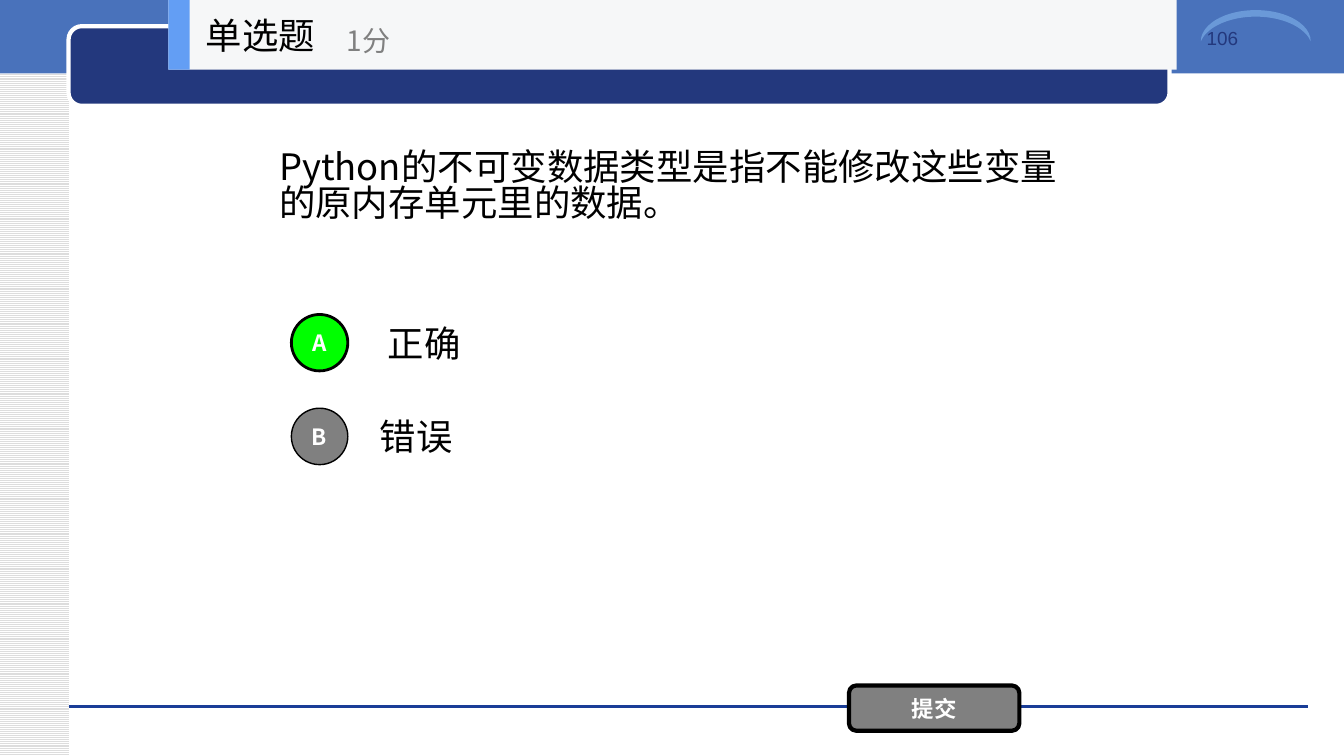
from dataclasses import dataclass
from typing import Optional

from lxml import etree
from pptx import Presentation
from pptx import util as u
from pptx.dml.color import RGBColor
from pptx.enum import dml, shapes, text
from pptx.oxml.ns import qn

CJK = "Noto Sans CJK SC"
COLORS = {
    "white": "FFFFFF", "black": "000000", "gray": "808080", "stripe": "DDDDDD",
    "band": "4972BB", "navy": "23387D", "rule": "1A3D97", "moon": "6A99D8",
    "header": "F6F7F8", "accent": "639EF4", "correct": "00FF00",
}
SHAPE = shapes.MSO_SHAPE


@dataclass
class Box:
    left: float
    top: float
    width: float
    height: float

    def emu(self) -> tuple:
        return tuple(map(u.Inches, (self.left, self.top, self.width, self.height)))


@dataclass
class Style:
    size: float
    color: str = "black"
    font: str = CJK
    bold: bool = False
    align: text.PP_ALIGN = text.PP_ALIGN.LEFT
    anchor: text.MSO_ANCHOR = text.MSO_ANCHOR.MIDDLE
    spacing: float = 1.0


@dataclass
class Option:
    letter: str
    label: str
    label_left: float
    fill: str
    line_width: float


BODY = Style(26)
BUTTON = Style(16, "white", bold=True, align=text.PP_ALIGN.CENTER)
OPTIONS = [
    Option("A", "正确", 3.75, "correct", 2),
    Option("B", "错误", 3.67, "gray", 1),
]
OPTION_TOP, OPTION_PITCH = 3.05, 0.93


def rgb(name: str) -> RGBColor:
    return RGBColor.from_string(COLORS[name])


def write(sp, words: str, style: Style) -> None:
    tf = sp.text_frame
    tf.text = words
    tf.word_wrap = True
    tf.auto_size = text.MSO_AUTO_SIZE.NONE
    tf.vertical_anchor = style.anchor
    p = tf.paragraphs[0]
    p.alignment = style.align
    p.line_spacing = style.spacing
    r = p.runs[0]
    r.font.size = u.Pt(style.size)
    r.font.bold = style.bold
    r.font.name = style.font
    r.font.color.rgb = rgb(style.color)
    # East Asian characters take their typeface from a:ea
    latin = r.font._element.find(qn("a:latin"))
    ea = etree.Element(qn("a:ea"), typeface=style.font)
    latin.addnext(ea)


def add_text(s, box: Box, words: str, style: Style) -> None:
    write(s.shapes.add_textbox(*box.emu()), words, style)


def add_block(s, kind: SHAPE, box: Box, fill: str,
              line: Optional[str] = None, line_width: float = 0):
    sp = s.shapes.add_shape(kind, *box.emu())
    sp.shadow.inherit = False
    sp.fill.solid()
    sp.fill.fore_color.rgb = rgb(fill)
    if line:
        sp.line.color.rgb = rgb(line)
        sp.line.width = u.Pt(line_width)
    else:
        sp.line.fill.background()
    return sp


def add_background(s) -> None:
    side = add_block(s, SHAPE.RECTANGLE, Box(0, 0, 0.68, 7.5), "white")
    side.fill.patterned()
    side.fill.pattern = dml.MSO_PATTERN.LIGHT_HORIZONTAL
    side.fill.fore_color.rgb = rgb("stripe")
    side.fill.back_color.rgb = rgb("white")

    add_block(s, SHAPE.RECTANGLE, Box(0, -0.03, 13.33, 0.76), "band")
    rule = s.shapes.add_connector(
        shapes.MSO_CONNECTOR.STRAIGHT,
        *map(u.Inches, (0.68, 7.01, 12.97, 7.01)))
    rule.line.color.rgb = rgb("rule")
    rule.line.width = u.Pt(0)
    etree.SubElement(rule._element.spPr, qn("a:effectLst"))

    add_block(s, SHAPE.ROUNDED_RECTANGLE, Box(0.68, 0.26, 10.92, 0.79),
              "navy", "white", 3)
    moon = add_block(s, SHAPE.MOON, Box(12.3, -0.29, 0.31, 1.09), "moon")
    moon.rotation = 90
    moon.adjustments[0] = 0.21
    add_text(s, Box(11.87, 0.21, 1.21, 0.71), "106",
             Style(13.5, "navy", "Arial", anchor=text.MSO_ANCHOR.TOP))


def add_option(s, option: Option, top: float) -> None:
    add_text(s, Box(option.label_left, top, 7, 0.7), option.label, BODY)
    badge = add_block(s, SHAPE.OVAL, Box(2.89, top + 0.07, 0.56, 0.56),
                      option.fill, "black", option.line_width)
    write(badge, option.letter, BUTTON)


def add_header(s) -> None:
    add_block(s, SHAPE.RECTANGLE, Box(1.67, 0, 10, 0.69), "header")
    add_block(s, SHAPE.RECTANGLE, Box(1.67, 0, 0.21, 0.69), "accent")
    title = s.shapes.title
    title.left, title.top, title.width, title.height = Box(1.94, 0, 2.08, 0.69).emu()
    write(title, "单选题", BODY)
    # Bring the title in front of the header bar
    title.element.getparent().append(title.element)
    add_text(s, Box(3.34, 0.12, 2.5, 0.56), "1分", Style(20, "gray"))


def main() -> None:
    prs = Presentation()
    prs.slide_width, prs.slide_height = u.Inches(13.33), u.Inches(7.5)
    s = prs.slides.add_slide(prs.slide_layouts[5])
    add_background(s)
    add_text(s, Box(2.67, 0.69, 8, 2.34),
             "Python的不可变数据类型是指不能修改这些变量的原内存单元里的数据。",
             Style(26, spacing=0.83))
    for i, option in enumerate(OPTIONS):
        add_option(s, option, OPTION_TOP + i * OPTION_PITCH)
    submit = add_block(s, SHAPE.ROUNDED_RECTANGLE, Box(8.42, 6.8, 1.69, 0.45),
                       "gray", "black", 3)
    write(submit, "提交", BUTTON)
    add_header(s)
    prs.save("out.pptx")


if __name__ == "__main__":
    main()
